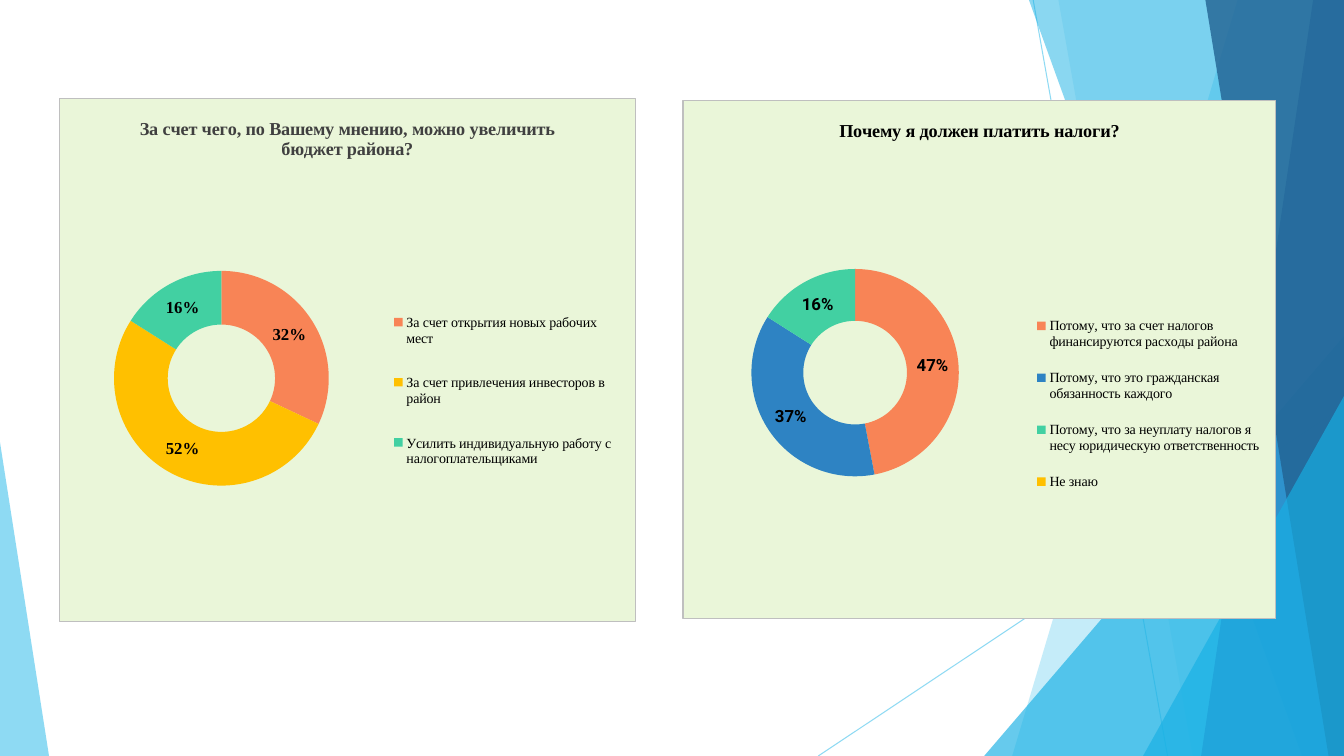
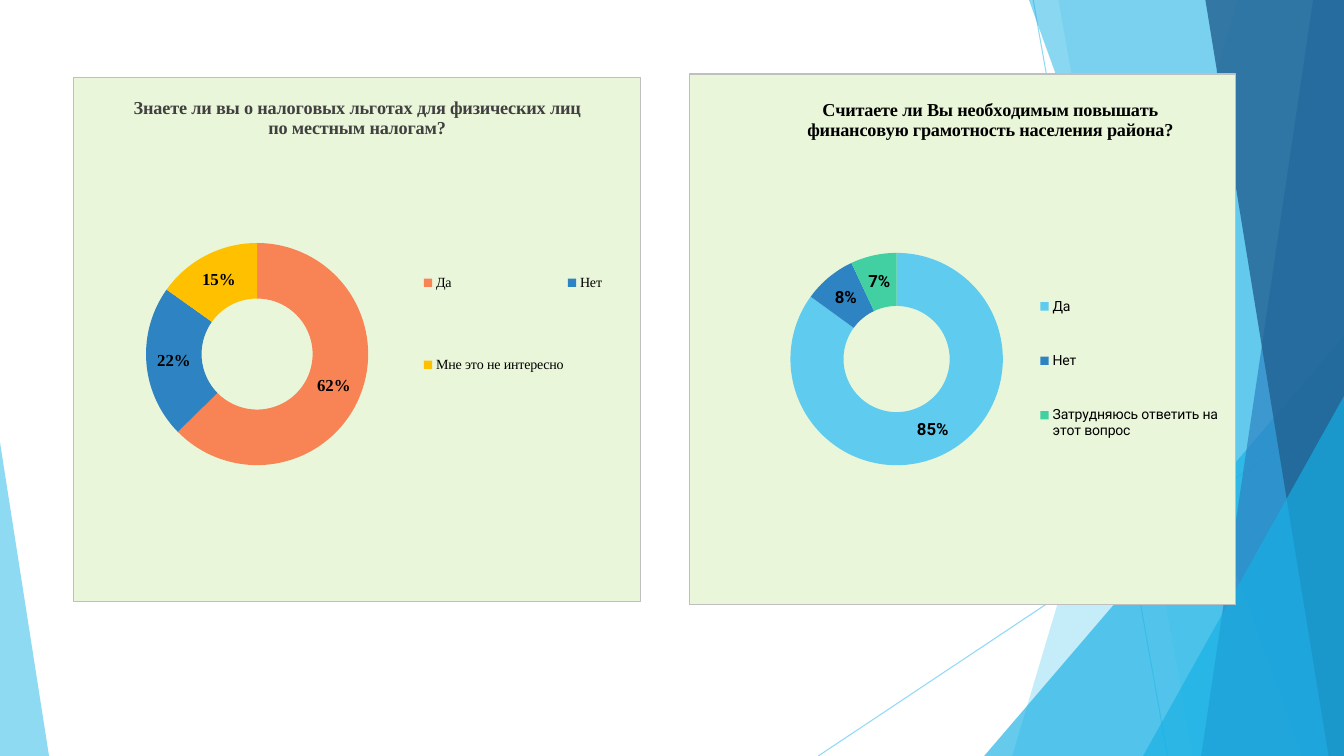
"""Builds two slides of survey doughnut charts over a shared faceted backdrop."""
from dataclasses import dataclass

from lxml.etree import SubElement
from pptx import Presentation
from pptx.chart.data import CategoryChartData
from pptx.dml.color import RGBColor
from pptx.enum.chart import XL_CHART_TYPE as ChartType, XL_LEGEND_POSITION as LegendPosition
from pptx.enum.shapes import MSO_CONNECTOR as Connector, MSO_SHAPE as Preset
from pptx.oxml import parse_xml
from pptx.oxml.ns import nsdecls, qn
from pptx.util import Pt


@dataclass(frozen=True)
class Theme:
    width: int = 960
    height: int = 540
    sky: str = "5FCBEF"
    azure: str = "17B0E4"
    blue: str = "2E83C3"
    navy: str = "226292"
    coral: str = "F88456"
    amber: str = "FFC000"
    mint: str = "42D0A2"
    panel: str = "EAF6D9"
    border: str = "BFBFBF"
    gray: str = "404040"
    black: str = "000000"
    serif: str = "Times New Roman"
    sans: str = "Roboto"
    title_size: int = 13
    label_size: int = 12
    legend_size: int = 10
    line_width: float = 0.75


THEME = Theme()


@dataclass(frozen=True)
class Survey:
    question: str
    answers: tuple
    bounds: tuple
    plot: tuple
    legend: tuple
    title_color: str = THEME.black
    label_font: str = THEME.sans
    legend_font: str = THEME.serif
    title_corner: tuple = ()


SLIDES = (
    (
        Survey(
            "За счет чего, по Вашему мнению, можно увеличить бюджет района?",
            (("За счет открытия новых рабочих мест", 32, THEME.coral),
             ("За счет привлечения инвесторов в район", 52, THEME.amber),
             ("Усилить индивидуальную работу с налогоплательщиками", 16, THEME.mint)),
            bounds=(42, 70, 412, 374),
            plot=(0.095, 0.33, 0.373, 0.411),
            legend=(0.57, 0.36, 0.4, 0.4),
            title_color=THEME.gray, label_font=THEME.serif,
        ),
        Survey(
            "Почему я должен платить налоги?",
            (("Потому, что за счет налогов финансируются расходы района", 47, THEME.coral),
             ("Потому, что это гражданская обязанность каждого", 37, THEME.blue),
             ("Потому, что за неуплату налогов я несу юридическую ответственность",
              16, THEME.mint),
             ("Не знаю", 0, THEME.amber)),
            bounds=(487.5, 71.5, 424, 371),
            plot=(0.062, 0.325, 0.457, 0.4),
            legend=(0.58, 0.38, 0.41, 0.41),
        ),
    ),
    (
        Survey(
            "Знаете ли вы о налоговых льготах для физических лиц по местным налогам?",
            (("Да", 62, THEME.coral),
             ("Нет", 22, THEME.blue),
             ("Мне это не интересно", 15, THEME.amber)),
            bounds=(52, 55, 406, 375),
            plot=(0.083, 0.316, 0.482, 0.424),
            legend=(0.61, 0.25, 0.33, 0.44),
            title_color=THEME.gray, label_font=THEME.serif,
        ),
        Survey(
            "Считаете ли Вы необходимым повышать финансовую грамотность населения района?",
            (("Да", 85, THEME.sky),
             ("Нет", 8, THEME.blue),
             ("Затрудняюсь ответить на этот вопрос", 7, THEME.mint)),
            bounds=(492, 52.5, 391, 380),
            plot=(0.151, 0.337, 0.457, 0.4),
            legend=(0.63, 0.35, 0.35, 0.41),
            legend_font=THEME.sans, title_corner=(0.21, 0.04),
        ),
    ),
)


def rgb(code):
    return RGBColor.from_string(code)


def set_opacity(shape, percent):
    for color in shape.element.iter(qn("a:srgbClr")):
        SubElement(color, qn("a:alpha"), val=str(percent * 1000))


def fill_facet(shape, color, opacity):
    shape.shadow.inherit = False
    shape.fill.solid()
    shape.fill.fore_color.rgb = rgb(color)
    shape.line.fill.background()
    set_opacity(shape, opacity)


def add_ray(slide, start, end):
    ray = slide.shapes.add_connector(Connector.STRAIGHT, *map(Pt, start + end))
    ray.line.color.rgb = rgb(THEME.sky)
    ray.line.width = Pt(THEME.line_width)
    SubElement(ray.element.spPr, qn("a:effectLst"))
    set_opacity(ray, 70)


def add_band(slide, top_x, bottom_x, color, opacity):
    corners = ((THEME.width, 0), (THEME.width, THEME.height), (bottom_x, THEME.height))
    outline = slide.shapes.build_freeform(Pt(top_x), 0)
    outline.add_line_segments([(Pt(x), Pt(y)) for x, y in corners])
    fill_facet(outline.convert_to_shape(), color, opacity)


def add_corner(slide, left, top, right, apex, color, opacity):
    box = (left, top, right - left, THEME.height - top)
    corner = slide.shapes.add_shape(Preset.ISOSCELES_TRIANGLE, *map(Pt, box))
    corner.adjustments[0] = apex
    fill_facet(corner, color, opacity)


def add_backdrop(slide):
    """Draws the facets and moves them to the layout that all slides share."""
    add_ray(slide, (738, 0), (834, THEME.height))
    add_ray(slide, (THEME.width, 290), (584.5, THEME.height))
    add_band(slide, 884, 723, THEME.sky, 36)
    add_band(slide, 756, 852, THEME.sky, 20)
    add_corner(slide, 703, 240, THEME.width, 1, THEME.azure, 66)
    add_band(slide, 735, 930, THEME.azure, 50)
    add_band(slide, 938, 858, THEME.blue, 70)
    add_band(slide, 861, 949, THEME.navy, 80)
    add_corner(slide, 816.5, 283, THEME.width, 1, THEME.azure, 66)
    add_corner(slide, 0, 316, 35, 0, THEME.sky, 70)
    for shape in list(slide.shapes):
        slide.slide_layout.shapes.element.append(shape.element)


def set_font(font, name, size, color=THEME.black, bold=False):
    font.name = name
    font.size = Pt(size)
    font.color.rgb = rgb(color)
    font.bold = bold


def place_part(part, frame, inner=False):
    """Gives a chart part a manual layout in fractions of the chart."""
    for old in part.findall(qn("c:layout")):
        part.remove(old)
    target = '<c:layoutTarget val="inner"/>' if inner else ""
    modes = "".join(f'<c:{side}Mode val="edge"/>' for side in "xy")
    sizes = "".join(f'<c:{side} val="{value}"/>' for side, value in zip("xywh", frame))
    layout = parse_xml(f'<c:layout {nsdecls("c")}><c:manualLayout>{target}{modes}{sizes}'
                       '</c:manualLayout></c:layout>')
    overlay = part.find(qn("c:overlay"))
    if overlay is None:
        part.insert(0, layout)
    else:
        overlay.addprevious(layout)


def paint_panel(chart_part):
    chart_part.addnext(parse_xml(
        f'<c:spPr {nsdecls("c", "a")}>'
        f'<a:solidFill><a:srgbClr val="{THEME.panel}"/></a:solidFill>'
        f'<a:ln w="{Pt(THEME.line_width)}"><a:solidFill><a:srgbClr val="{THEME.border}"/>'
        '</a:solidFill></a:ln></c:spPr>'))


def add_title(chart, survey):
    chart.has_title = True
    title = chart.chart_title
    run = title.text_frame.paragraphs[0].add_run()
    run.text = survey.question
    set_font(run.font, THEME.serif, THEME.title_size, survey.title_color, True)
    if survey.title_corner:
        place_part(title.element if hasattr(title, "element") else title._element,
                   survey.title_corner)


def add_legend(chart, survey):
    chart.has_legend = True
    legend = chart.legend
    legend.position = LegendPosition.RIGHT
    legend.include_layout = False
    set_font(legend.font, survey.legend_font, THEME.legend_size)


def style_slices(plot, survey):
    plot.vary_by_categories = True
    plot.has_data_labels = True
    labels = plot.data_labels
    labels.show_percentage = False
    labels.show_value = True
    labels.number_format = '0"%";;'
    labels.number_format_is_linked = False
    set_font(labels.font, survey.label_font, THEME.label_size, bold=True)
    for index, (_, _, color) in enumerate(survey.answers):
        look = plot.series[0].points[index].format
        look.fill.solid()
        look.fill.fore_color.rgb = rgb(color)
        look.line.fill.background()


def add_doughnut(slide, survey):
    data = CategoryChartData()
    data.categories = [answer for answer, _, _ in survey.answers]
    data.add_series("Series 1", [share for _, share, _ in survey.answers])
    frame = slide.shapes.add_chart(ChartType.DOUGHNUT, *map(Pt, survey.bounds), data)
    chart = frame.chart
    set_font(chart.font, survey.label_font, THEME.legend_size)
    add_title(chart, survey)
    add_legend(chart, survey)
    style_slices(chart.plots[0], survey)
    chart_part = chart.element.find(qn("c:chart"))
    place_part(chart_part.find(qn("c:plotArea")), survey.plot, inner=True)
    place_part(chart_part.find(qn("c:legend")), survey.legend)
    paint_panel(chart_part)


def main():
    deck = Presentation()
    deck.slide_width, deck.slide_height = Pt(THEME.width), Pt(THEME.height)
    blank = deck.slide_layouts[6]
    pages = [deck.slides.add_slide(blank) for _ in SLIDES]
    add_backdrop(pages[0])
    for page, surveys in zip(pages, SLIDES):
        for survey in surveys:
            add_doughnut(page, survey)
    deck.save("out.pptx")


if __name__ == "__main__":
    main()
